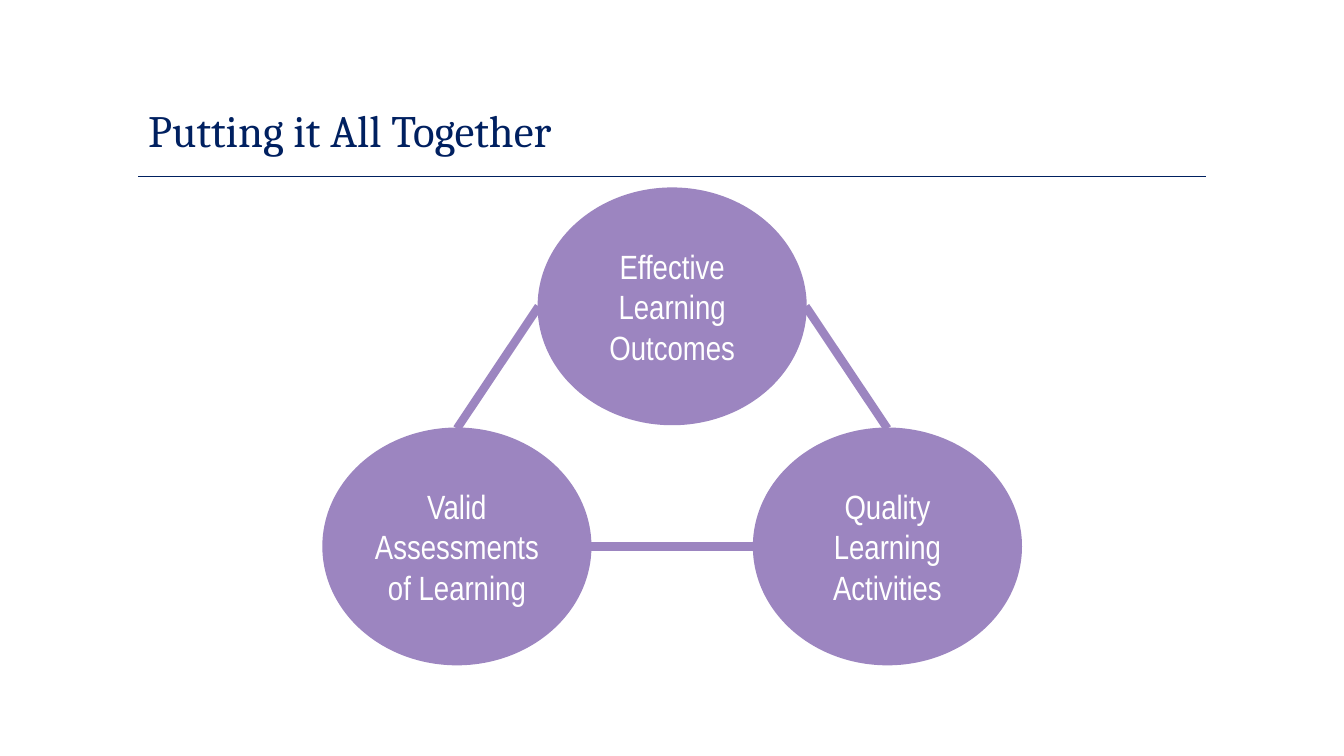
from dataclasses import dataclass

from lxml import etree
from pptx import Presentation
from pptx import util as u
from pptx.dml.color import RGBColor
from pptx.enum import shapes, text
from pptx.oxml import ns

Cm = u.Cm


@dataclass(frozen=True)
class Theme:
    navy: RGBColor = RGBColor.from_string("002060")
    purple: RGBColor = RGBColor.from_string("9C85C0")
    white: RGBColor = RGBColor.from_string("FFFFFF")
    title_font: str = "Cambria"
    body_font: str = "Arial Narrow"
    title_size: u.Pt = u.Pt(32)
    body_size: u.Pt = u.Pt(24)
    rule_width: u.Pt = u.Pt(0.5)
    outline_width: u.Pt = u.Pt(1.5)
    link_width: u.Pt = u.Pt(6)


THEME = Theme()
TITLE_FORMAT = {"name": THEME.title_font, "size": THEME.title_size}
CIRCLE_FORMAT = {"name": THEME.body_font, "size": THEME.body_size}


def format_paragraph(paragraph, alignment, color, font_format):
    paragraph.alignment = alignment
    for name, value in font_format.items():
        setattr(paragraph.font, name, value)
    paragraph.font.color.rgb = color


def add_line(slide, start, end, color, width):
    line = slide.shapes.add_connector(shapes.MSO_CONNECTOR.STRAIGHT, *start, *end)
    line.line.color.rgb = color
    line.line.width = width
    etree.SubElement(line._element.spPr, ns.qn("a:effectLst"))


def add_title(slide, left, top, width, height):
    """Place the title and the rule that crosses the lower part of its box."""
    rule_top = top + Cm(3.48)
    add_line(slide, (left, rule_top), (left + width, rule_top), THEME.navy, THEME.rule_width)

    title = slide.shapes.title
    box = {"left": left, "top": top, "width": width, "height": height}
    for name, value in box.items():
        setattr(title, name, value)
    frame = title.text_frame
    frame.text = "Putting it All Together"
    frame.auto_size = text.MSO_AUTO_SIZE.NONE
    frame.vertical_anchor = text.MSO_ANCHOR.MIDDLE
    format_paragraph(frame.paragraphs[0], text.PP_ALIGN.LEFT, THEME.navy, TITLE_FORMAT)


def add_circle(slide, left, top, width, height, label):
    circle = slide.shapes.add_shape(shapes.MSO_SHAPE.OVAL, left, top, width, height)
    circle.shadow.inherit = False
    circle.fill.solid()
    circle.fill.fore_color.rgb = THEME.purple
    circle.line.color.rgb = THEME.purple
    circle.line.width = THEME.outline_width
    frame = circle.text_frame
    frame.text = label
    frame.word_wrap = True
    frame.vertical_anchor = text.MSO_ANCHOR.MIDDLE
    for paragraph in frame.paragraphs:
        format_paragraph(paragraph, text.PP_ALIGN.CENTER, THEME.white, CIRCLE_FORMAT)


def add_triangle(slide, left, top, width, height):
    """Place one circle above two others, joined by three links."""
    circle_width, circle_height = Cm(6.73), Cm(5.94)
    right = left + width - circle_width
    middle = (left + right) // 2
    lower = top + height - circle_height
    half_width, half_height = circle_width // 2, circle_height // 2

    # Circles
    for x, y, label in (
        (middle, top, "Effective Learning Outcomes"),
        (left, lower, "Valid\nAssessments of Learning"),
        (right, lower, "Quality Learning Activities"),
    ):
        add_circle(slide, x, y, circle_width, circle_height, label)

    # Links
    upper_center, lower_center = top + half_height, lower + half_height
    for start, end in (
        ((middle + circle_width, upper_center), (right + half_width, lower)),
        ((left + circle_width, lower_center), (right, lower_center)),
        ((middle, upper_center), (left + half_width, lower)),
    ):
        add_line(slide, start, end, THEME.purple, THEME.link_width)


def main():
    presentation = Presentation()
    presentation.slide_width = Cm(33.87)
    presentation.slide_height = Cm(19.05)
    slide = presentation.slides.add_slide(presentation.slide_layouts[5])
    add_title(slide, Cm(3.48), Cm(0.97), Cm(26.92), Cm(4.57))
    add_triangle(slide, Cm(8.15), Cm(4.75), Cm(17.58), Cm(11.99))
    presentation.save("out.pptx")


if __name__ == "__main__":
    main()
